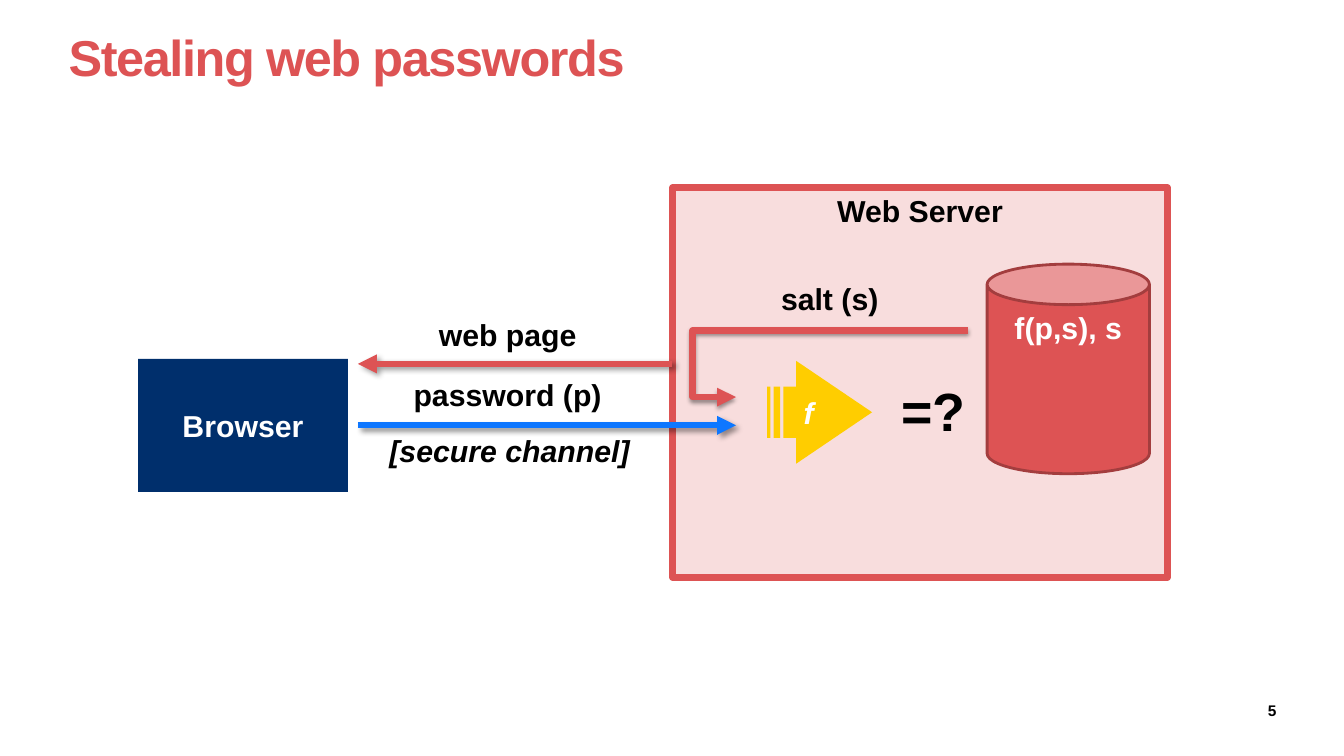
from dataclasses import dataclass

from lxml import etree
from pptx import Presentation
from pptx.dml.color import RGBColor
from pptx.enum.shapes import MSO_CONNECTOR, MSO_SHAPE
from pptx.enum.text import MSO_ANCHOR, MSO_AUTO_SIZE, PP_ALIGN
from pptx.oxml.ns import qn
from pptx.util import Pt

PX = 9144  # 100 px to the inch
FONT = "Arial"
SIZE = 21.6

RED = RGBColor(0xDD, 0x53, 0x54)
DARK_RED = RGBColor(0xA3, 0x3D, 0x3E)
PINK = RGBColor(0xF8, 0xDD, 0xDD)
NAVY = RGBColor(0x00, 0x2F, 0x6C)
BLUE = RGBColor(0x0E, 0x77, 0xFF)
GOLD = RGBColor(0xFF, 0xCD, 0x00)
BLACK = RGBColor(0, 0, 0)
WHITE = RGBColor(0xFF, 0xFF, 0xFF)

RECT = MSO_SHAPE.RECTANGLE
CAN = MSO_SHAPE.CAN
STRIPED = MSO_SHAPE.STRIPED_RIGHT_ARROW
STRAIGHT = MSO_CONNECTOR.STRAIGHT
ELBOW = MSO_CONNECTOR.ELBOW
TOP, MIDDLE = MSO_ANCHOR.TOP, MSO_ANCHOR.MIDDLE
LEFT, CENTER, RIGHT = PP_ALIGN.LEFT, PP_ALIGN.CENTER, PP_ALIGN.RIGHT
GROW, FIXED = MSO_AUTO_SIZE.SHAPE_TO_FIT_TEXT, MSO_AUTO_SIZE.NONE

Box = tuple[int, int, int, int]


@dataclass(frozen=True)
class Shadow:
    """Lengths in points, angle in degrees, alpha in percent."""
    blur: float
    dist: float
    angle: int
    alpha: int


SLANTED = Shadow(4, 3, 45, 40)
BELOW = Shadow(3.1, 1.6, 90, 38)


@dataclass(frozen=True)
class Node:
    kind: int
    box: Box
    text: str
    fill: RGBColor
    color: RGBColor = WHITE
    edge: RGBColor | None = None
    width: float = 0
    anchor: int = MIDDLE
    italic: bool = False
    adjust: tuple[float, ...] = ()


@dataclass(frozen=True)
class Label:
    box: Box
    text: str
    size: float = SIZE
    italic: bool = False


@dataclass(frozen=True)
class Arrow:
    start: tuple[int, int]
    end: tuple[int, int]
    color: RGBColor
    shadow: Shadow = SLANTED
    bend: int | None = None  # x of the upright part


SERVER = Node(RECT, (667, 186, 491, 387), "Web Server", PINK, BLACK, RED, 4.5, TOP)
NODES = [
    Node(STRIPED, (761, 358, 104, 102), "f", GOLD, italic=True, adjust=(0.5, 0.738)),
    Node(CAN, (979, 262, 161, 208), "f(p,s), s", RED, edge=DARK_RED, width=2, anchor=TOP),
    Node(RECT, (137, 356, 208, 132), "Browser", NAVY),
]
ARROWS = [
    Arrow((667, 361), (355, 361), RED),
    Arrow((960, 328), (730, 394), RED, BELOW, 687),
    Arrow((355, 422), (730, 422), BLUE),
]
LABELS = [
    Label((383, 314, 241, 36), "web page"),
    Label((733, 278, 180, 36), "salt (s)"),
    Label((893, 375, 66, 65), "=?", 38.4),
    Label((383, 373, 241, 36), "password (p)"),
    Label((364, 429, 283, 36), "[secure channel]", italic=True),
]


def scale(values: tuple[int, ...]) -> list[int]:
    return [value * PX for value in values]


def write(frame, text: str, color: RGBColor, size: float = SIZE,
          align: int = CENTER, anchor: int = TOP, italic: bool = False) -> None:
    frame.text = text
    frame.word_wrap = True
    frame.vertical_anchor = anchor
    line = frame.paragraphs[0]
    line.alignment = align
    font = line.runs[0].font
    font.name, font.size = FONT, Pt(size)
    font.bold, font.italic = True, italic
    font.color.rgb = color


def set_insets(frame, left: int = 0, top: int = 0, right: int = 0, bottom: int = 0) -> None:
    frame.margin_left, frame.margin_top = left * PX, top * PX
    frame.margin_right, frame.margin_bottom = right * PX, bottom * PX


def add_node(shapes, node: Node) -> None:
    shape = shapes.add_shape(node.kind, *scale(node.box))
    shape.shadow.inherit = False
    for index, value in enumerate(node.adjust):
        shape.adjustments[index] = value
    shape.fill.solid()
    shape.fill.fore_color.rgb = node.fill
    if node.edge is None:
        shape.line.fill.background()
    else:
        shape.line.color.rgb = node.edge
        shape.line.width = Pt(node.width)
    write(shape.text_frame, node.text, node.color, anchor=node.anchor, italic=node.italic)


def add_label(shapes, label: Label) -> None:
    frame = shapes.add_textbox(*scale(label.box)).text_frame
    set_insets(frame)
    write(frame, label.text, BLACK, label.size, italic=label.italic)
    frame.auto_size = GROW


def add_arrow(shapes, arrow: Arrow) -> None:
    kind = STRAIGHT if arrow.bend is None else ELBOW
    link = shapes.add_connector(kind, *scale(arrow.start + arrow.end))
    link.line.color.rgb = arrow.color
    link.line.width = Pt(4.5)
    etree.SubElement(link.line._get_or_add_ln(), qn("a:tailEnd"), type="triangle")
    props = link._element.spPr
    if arrow.bend is not None:
        ratio = (arrow.bend - arrow.start[0]) / (arrow.end[0] - arrow.start[0])
        guides = props.find(qn("a:prstGeom")).get_or_add_avLst()
        etree.SubElement(guides, qn("a:gd"), name="adj1", fmla=f"val {round(ratio * 100000)}")
    shade = arrow.shadow
    effects = etree.SubElement(props, qn("a:effectLst"))
    outer = etree.SubElement(
        effects, qn("a:outerShdw"), blurRad=str(Pt(shade.blur)), dist=str(Pt(shade.dist)),
        dir=str(shade.angle * 60000), rotWithShape="0")
    black = etree.SubElement(outer, qn("a:srgbClr"), val=str(BLACK))
    etree.SubElement(black, qn("a:alpha"), val=str(shade.alpha * 1000))


def set_title(title, text: str) -> None:
    title.left, title.top, title.width, title.height = scale((68, 35, 1197, 131))
    frame = title.text_frame
    set_insets(frame)
    write(frame, text, RED, 36, LEFT)
    frame.auto_size = FIXED
    line = frame.paragraphs[0]
    line.line_spacing = 0.85
    line.runs[0].font._element.set("spc", "-100")


def add_number(shapes, text: str) -> None:
    frame = shapes.add_textbox(*scale((1179, 696, 87, 17))).text_frame
    set_insets(frame, left=10, top=5, bottom=5)
    write(frame, text, BLACK, 11, RIGHT, MIDDLE)


def main() -> None:
    deck = Presentation()
    deck.slide_width, deck.slide_height = scale((1333, 750))
    slide = deck.slides.add_slide(deck.slide_layouts[5])
    shapes = slide.shapes
    set_title(shapes.title, "Stealing web passwords")
    add_node(shapes, SERVER)
    for arrow in ARROWS:
        add_arrow(shapes, arrow)
    for node in NODES:
        add_node(shapes, node)
    for label in LABELS:
        add_label(shapes, label)
    add_number(shapes, "5")
    deck.save("out.pptx")


if __name__ == "__main__":
    main()
